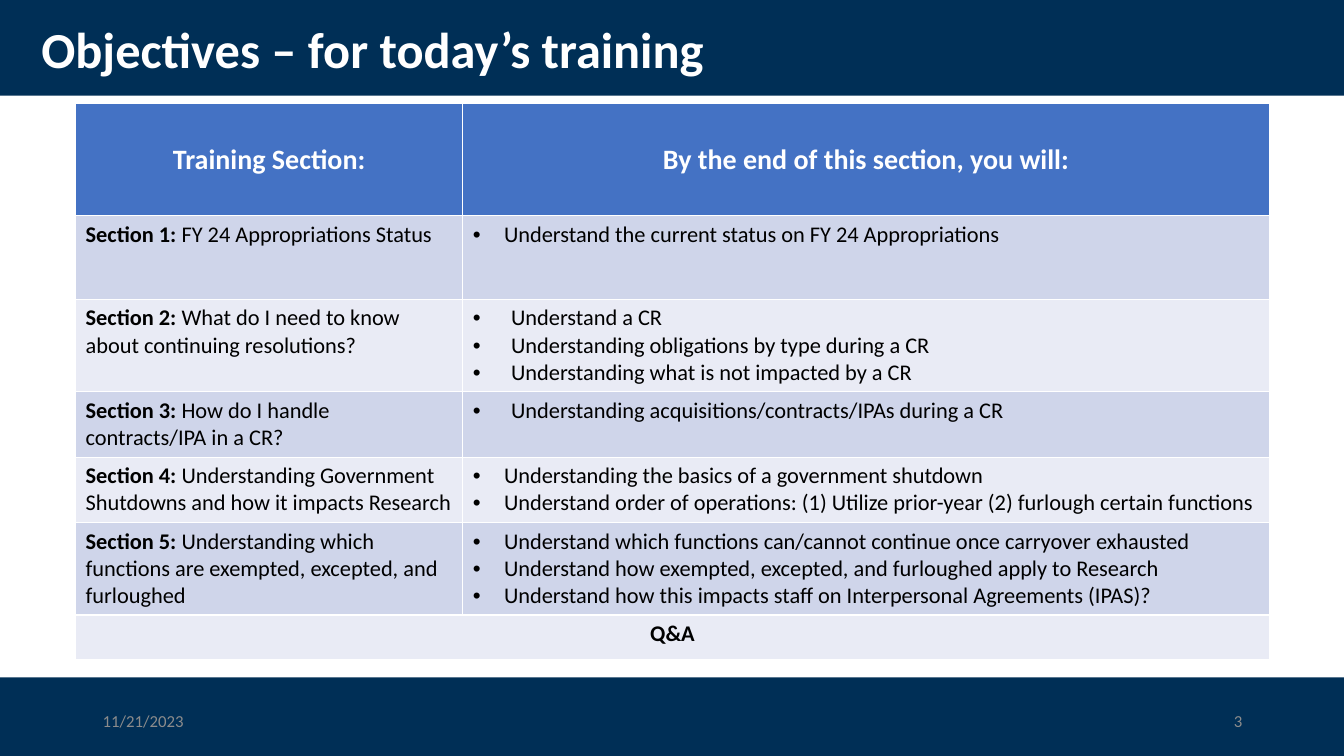
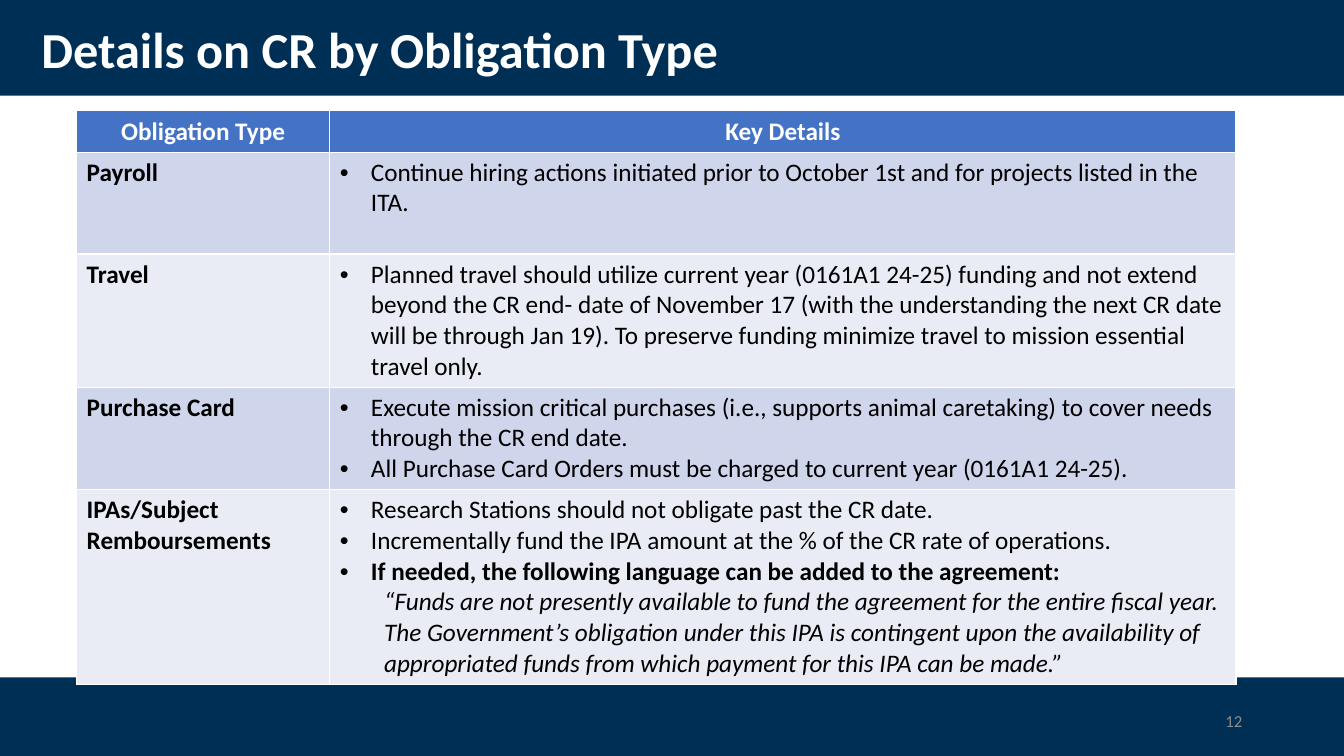
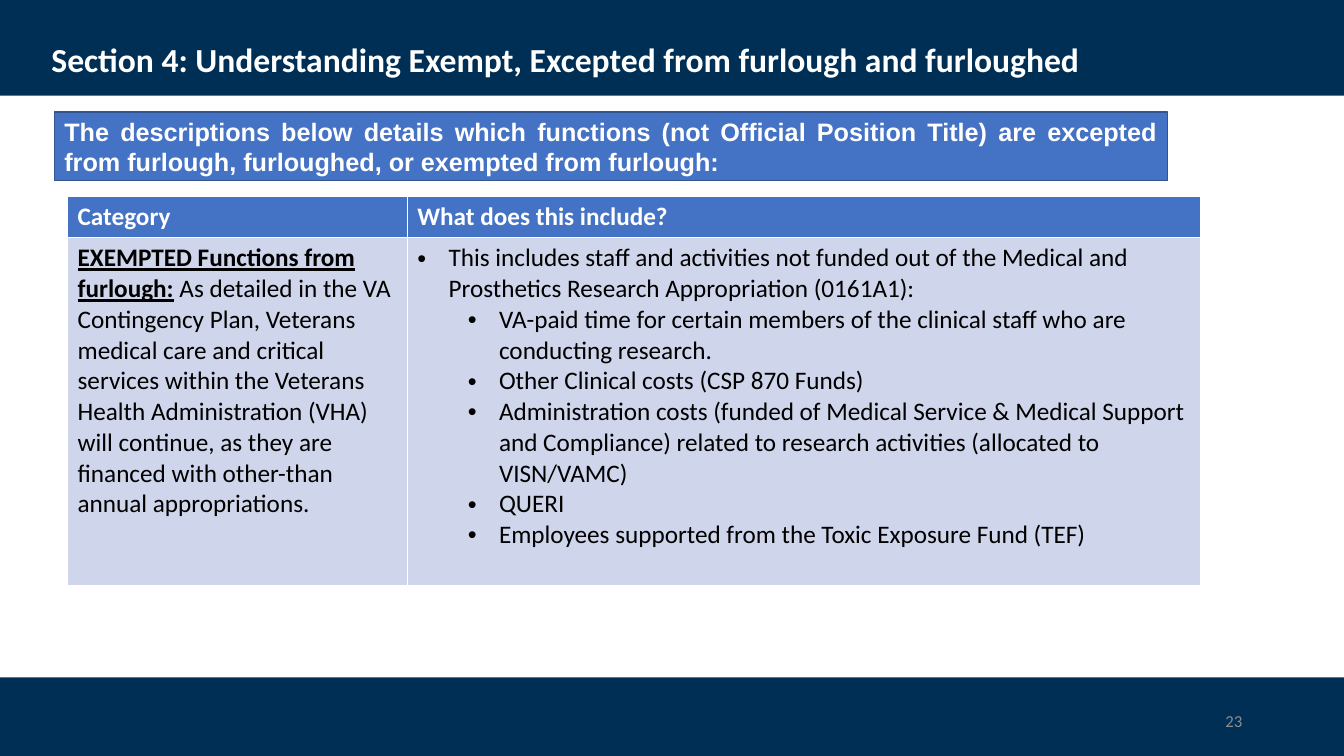
"""Build three training slides on continuing resolutions and furloughs."""
from dataclasses import dataclass

from lxml import etree
from pptx import Presentation
from pptx.dml.color import RGBColor
from pptx.enum.shapes import MSO_SHAPE
from pptx.enum.text import MSO_ANCHOR, MSO_AUTO_SIZE, PP_ALIGN
from pptx.oxml.ns import qn
from pptx.util import Inches, Pt

RECTANGLE = MSO_SHAPE.RECTANGLE
MIDDLE = MSO_ANCHOR.MIDDLE
NO_FIT = MSO_AUTO_SIZE.NONE
LEFT, CENTER, RIGHT, JUSTIFY = (
    PP_ALIGN.LEFT, PP_ALIGN.CENTER, PP_ALIGN.RIGHT, PP_ALIGN.JUSTIFY)


@dataclass(frozen=True)
class Theme:
    navy: str = "002F56"
    blue: str = "4472C4"
    outline: str = "325491"
    dark_row: str = "CFD5EA"
    light_row: str = "E9EBF5"
    white: str = "FFFFFF"
    black: str = "000000"
    grey: str = "8C8C8C"
    font: str = "Calibri"
    banner_font: str = "Arial"
    banner_size: int = 18
    footer_size: int = 12


THEME = Theme()

STYLES = {
    "point": {"indent": 0.31, "hang": 0.31},
    "wide": {"indent": 0.38, "hang": 0.38},
    "sub": {"indent": 0.81, "hang": 0.31, "level": 1},
    "strong": {"indent": 0.31, "hang": 0.31, "bold": True},
    "quote": {"indent": 0.44, "italic": True},
}

SLIDES = [
    {
        "title": "Objectives – for today’s training",
        "title_at": (0.31, 0.18), "title_size": 36,
        "number": "3", "date": "11/21/2023",
        "at": (0.75, 1.03), "columns": (3.84, 8),
        "heights": (1.11, 0.83, 0.91, 0.65, 0.65, 0.91, 0.44),
        "header": ("Training Section:", "By the end of this section, you will:"),
        "header_size": 20, "header_align": CENTER, "size": 16,
        "rows": [
            ("Section 1:", " FY 24 Appropriations Status", [
                ("point", "Understand the current status on FY 24 Appropriations")]),
            ("Section 2:", " What do I need to know about continuing resolutions?", [
                ("wide", "Understand a CR"),
                ("wide", "Understanding obligations by type during a CR"),
                ("wide", "Understanding what is not impacted by a CR")]),
            ("Section 3:", " How do I handle contracts/IPA in a CR?", [
                ("wide", "Understanding acquisitions/contracts/IPAs during a CR")]),
            ("Section 4:", " Understanding Government Shutdowns and how it impacts Research", [
                ("point", "Understanding the basics of a government shutdown"),
                ("point", "Understand order of operations: (1) Utilize prior-year "
                          "(2) furlough certain functions")]),
            ("Section 5:", " Understanding which functions are exempted, excepted, "
                           "and furloughed", [
                ("point", "Understand which functions can/cannot continue once "
                          "carryover exhausted"),
                ("point", "Understand how exempted, excepted, and furloughed apply "
                          "to Research"),
                ("point", "Understand how this impacts staff on Interpersonal "
                          "Agreements (IPAS)?")]),
            ("Q&A", "", []),
        ],
    },
    {
        "title": "Details on CR by Obligation Type",
        "title_at": (0.31, 0.18), "title_size": 36,
        "number": "12",
        "at": (0.76, 1.1), "columns": (2.51, 8.99),
        "heights": (0.41, 1.01, 1.32, 1.01, 1.93),
        "header": ("Obligation Type", "Key Details"),
        "header_size": 18, "header_align": CENTER, "size": 18,
        "rows": [
            ("Payroll", "", [
                ("point", "Continue hiring actions initiated prior to October 1st and "
                          "for projects listed in the ITA.")]),
            ("Travel", "", [
                ("point", "Planned travel should utilize current year (0161A1 24-25) "
                          "funding and not extend beyond the CR end- date of November 17 "
                          "(with the understanding the next CR date will be through "
                          "Jan 19). To preserve funding minimize travel to mission "
                          "essential travel only.")]),
            ("Purchase Card", "", [
                ("point", "Execute mission critical purchases (i.e., supports animal "
                          "caretaking) to cover needs through the CR end date."),
                ("point", "All Purchase Card Orders must be charged to current year "
                          "(0161A1 24-25).")]),
            ("IPAs/Subject Remboursements", "", [
                ("point", "Research Stations should not obligate past the CR date."),
                ("point", "Incrementally fund the IPA amount at the % of the CR rate "
                          "of operations."),
                ("strong", "If needed, the following language can be added to the "
                           "agreement:"),
                ("quote", "“Funds are not presently available to fund the agreement for "
                          "the entire fiscal year. The Government’s obligation under "
                          "this IPA is contingent upon the availability of appropriated "
                          "funds from which payment for this IPA can be made.”")]),
        ],
    },
    {
        "title": "Section 4: Understanding Exempt, Excepted from furlough and furloughed",
        "title_at": (0.41, 0.27), "title_size": 24,
        "number": "23",
        "at": (0.67, 1.95), "columns": (3.37, 7.87),
        "heights": (0.41, 3.45),
        "header": ("Category", "What does this include?"),
        "header_size": 18, "header_align": LEFT, "size": 18,
        "underline": True,
        "rows": [
            ("EXEMPTED Functions from furlough:",
             " As detailed in the VA Contingency Plan, Veterans medical care and critical "
             "services within the Veterans Health Administration (VHA) will continue, as "
             "they are financed with other-than annual appropriations.", [
                 ("point", "This includes staff and activities not funded out of the "
                           "Medical and Prosthetics Research Appropriation (0161A1):"),
                 ("sub", "VA-paid time for certain members of the clinical staff who are "
                         "conducting research."),
                 ("sub", "Other Clinical costs (CSP 870 Funds)"),
                 ("sub", "Administration costs (funded of Medical Service & Medical "
                         "Support and Compliance) related to research activities "
                         "(allocated to VISN/VAMC)"),
                 ("sub", "QUERI"),
                 ("sub", "Employees supported from the Toxic Exposure Fund (TEF)")]),
        ],
        "banner": "The descriptions below details which functions (not Official Position "
                  "Title) are excepted from furlough, furloughed, or exempted from furlough:",
    },
]


def write(paragraph, text, size=18, color=THEME.black, font=THEME.font, bold=False,
          italic=False, underline=False, align=LEFT, indent=0, hang=0, level=0):
    paragraph.alignment = align
    paragraph.level = level
    if indent:
        properties = paragraph._p.get_or_add_pPr()
        properties.set("marL", str(Inches(indent)))
        properties.set("indent", str(-Inches(hang)))
        if hang:
            etree.SubElement(properties, qn("a:buFont")).set("typeface", "Arial")
            etree.SubElement(properties, qn("a:buChar")).set("char", "•")
    run = paragraph.add_run()
    run.text = text
    run.font.name = font
    run.font.size = Pt(size)
    run.font.color.rgb = RGBColor.from_string(color)
    run.font.bold = bold
    run.font.italic = italic
    run.font.underline = underline


def add_box(slide, left, top, width, height, fill):
    box = slide.shapes.add_shape(
        RECTANGLE, Inches(left), Inches(top), Inches(width), Inches(height))
    box.shadow.inherit = False
    box.fill.solid()
    box.fill.fore_color.rgb = RGBColor.from_string(fill)
    box.line.fill.background()
    return box


deck = Presentation()
deck.slide_width = Inches(13.33)
deck.slide_height = Inches(7.5)
layout = deck.slide_layouts[5]

for index, content in enumerate(SLIDES):
    slide = deck.slides.add_slide(layout)

    if index == 0:
        for order, (top, height) in enumerate([(0, 0.95), (6.72, 0.8)]):
            band = add_box(slide, 0, top, 13.33, height, THEME.navy)
            band.element.nvSpPr.cNvPr.set("id", str(20 + order))
            layout.shapes.element.insert(2 + order, band.element)

    title = slide.shapes.title
    title.left, title.top = (Inches(value) for value in content["title_at"])
    title.width, title.height = Inches(11.5), Inches(0.68)
    title.text_frame.auto_size = NO_FIT
    title.text_frame.vertical_anchor = MIDDLE
    heading = title.text_frame.paragraphs[0]
    heading.line_spacing = 0.9
    write(heading, content["title"], size=content["title_size"],
          color=THEME.white, bold=True)

    left, top = content["at"]
    columns, heights = content["columns"], content["heights"]
    table = slide.shapes.add_table(
        len(heights), len(columns), Inches(left), Inches(top),
        Inches(sum(columns)), Inches(sum(heights))).table
    for column, width in zip(table.columns, columns):
        column.width = Inches(width)
    for number, (row, height) in enumerate(zip(table.rows, heights)):
        row.height = Inches(height)
        shade = THEME.dark_row if number % 2 else THEME.light_row
        for cell in row.cells:
            cell.fill.solid()
            cell.fill.fore_color.rgb = RGBColor.from_string(
                shade if number else THEME.blue)

    for cell, label in zip(table.rows[0].cells, content["header"]):
        cell.vertical_anchor = MIDDLE
        write(cell.text_frame.paragraphs[0], label, size=content["header_size"],
              color=THEME.white, bold=True, align=content["header_align"])

    size = content["size"]
    for number, (lead, rest, points) in enumerate(content["rows"], start=1):
        subject, details = table.rows[number].cells
        if not points:
            subject.merge(details)
        align = LEFT if points else CENTER
        opening = subject.text_frame.paragraphs[0]
        write(opening, lead, size=size, bold=True, align=align,
              underline=content.get("underline", False))
        if rest:
            write(opening, rest, size=size)
        for position, (style, text) in enumerate(points):
            frame = details.text_frame
            paragraph = frame.add_paragraph() if position else frame.paragraphs[0]
            write(paragraph, text, size=size, **STYLES[style])

    if "banner" in content:
        banner = add_box(slide, 0.54, 1.11, 11.04, 0.68, THEME.blue)
        banner.line.color.rgb = RGBColor.from_string(THEME.outline)
        banner.line.width = Pt(1)
        banner.text_frame.word_wrap = True
        banner.text_frame.vertical_anchor = MIDDLE
        write(banner.text_frame.paragraphs[0], content["banner"],
              size=THEME.banner_size, color=THEME.white, font=THEME.banner_font,
              bold=True, align=JUSTIFY)

    for key, left, align in [("number", 9.42, RIGHT), ("date", 0.92, LEFT)]:
        if key in content:
            footer = slide.shapes.add_textbox(
                Inches(left), Inches(6.95), Inches(3), Inches(0.4)).text_frame
            footer.word_wrap = True
            footer.vertical_anchor = MIDDLE
            write(footer.paragraphs[0], content[key], size=THEME.footer_size,
                  color=THEME.grey, align=align)

deck.save("out.pptx")
